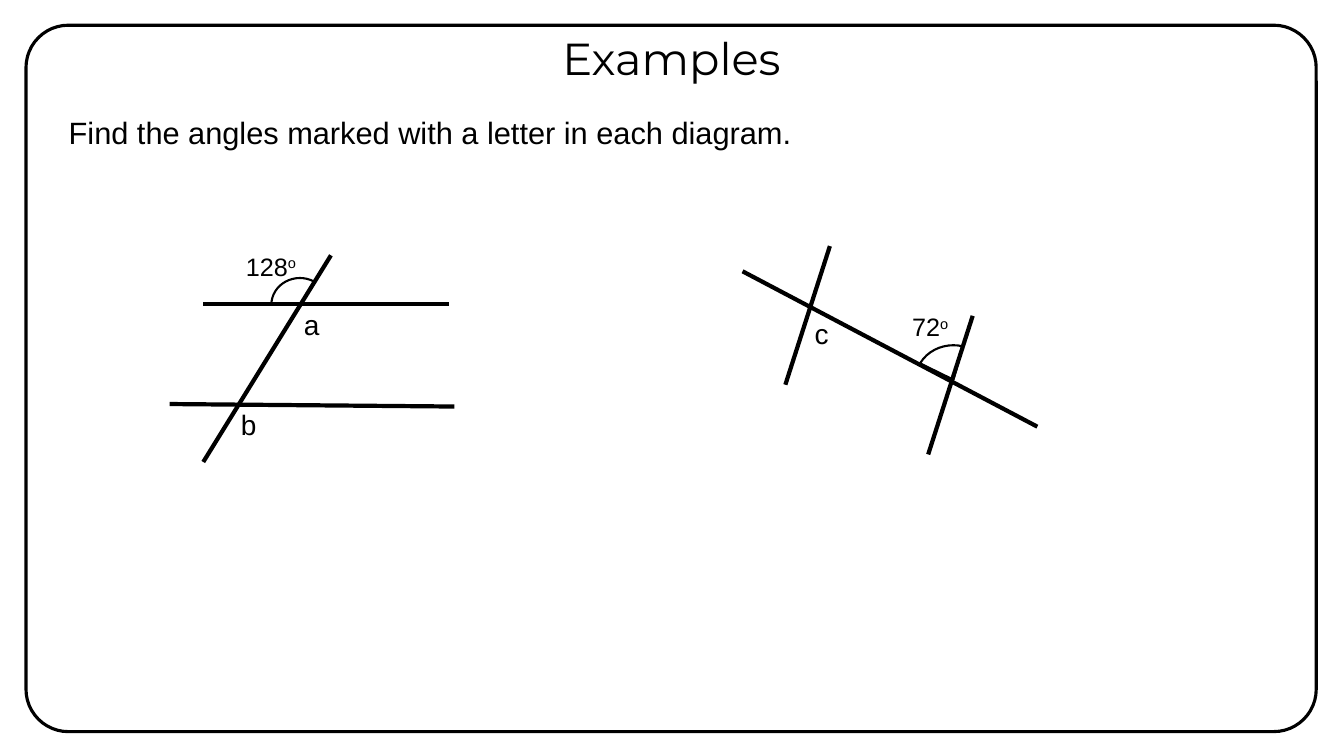
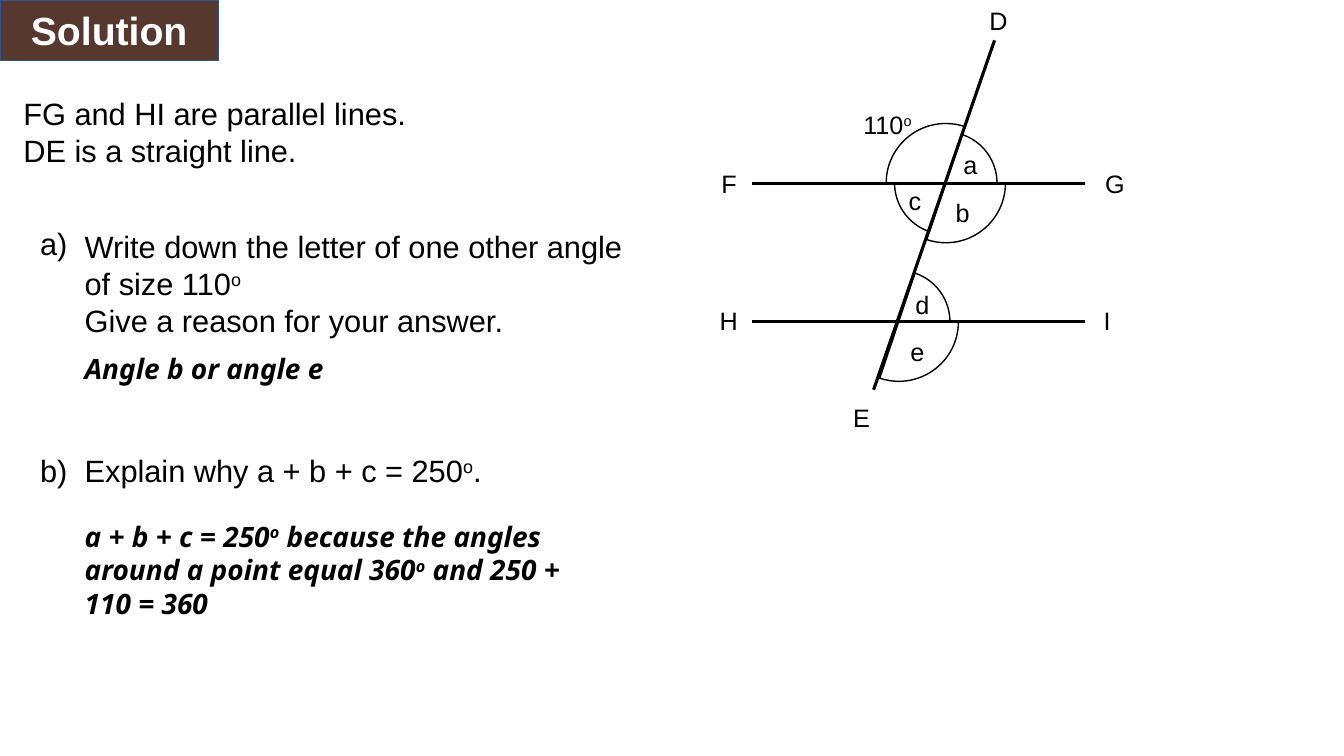
"""Build two slides on angles in parallel lines."""
from lxml.etree import SubElement
from pptx import Presentation
from pptx.dml.color import RGBColor
from pptx.enum.shapes import MSO_CONNECTOR as CONN, MSO_SHAPE as SHAPE
from pptx.enum.text import MSO_ANCHOR as ANCHOR, MSO_AUTO_SIZE as FIT, PP_ALIGN as ALIGN
from pptx.oxml.ns import qn
from pptx.util import Inches, Pt

BLACK = RGBColor(0x00, 0x00, 0x00)
WHITE = RGBColor(0xFF, 0xFF, 0xFF)
BROWN = RGBColor(0x57, 0x38, 0x2F)
BLUE = RGBColor(0x32, 0x54, 0x91)
COLS, ROWS, CELL = 160, 90, Inches(1 / 12)


class Deck:
    """Hold the style and the current slide, laid out on a grid of square cells."""

    body, title, answer = "Arial", "Montserrat", "Noto Sans"

    def __init__(self):
        self.prs = Presentation()
        self.prs.slide_width, self.prs.slide_height = COLS * CELL, ROWS * CELL
        self.s = None

    def new_slide(self):
        self.s = self.prs.slides.add_slide(self.prs.slide_layouts[6])

    def cells(self, *values):
        return [round(v * CELL) for v in values]

    def shape(self, kind, box, line=BLACK, weight=1, fill=None):
        sp = self.s.shapes.add_shape(kind, *self.cells(*box))
        sp.shadow.inherit = False
        if fill is None:
            sp.fill.background()
        else:
            sp.fill.solid()
            sp.fill.fore_color.rgb = fill
        sp.line.color.rgb = line
        sp.line.width = Pt(weight)
        return sp

    def fill_text(self, tf, paragraphs, size, name=None, color=BLACK,
                  bold=False, italic=False, align=ALIGN.LEFT):
        """Fill a text frame; text between carets is superscript."""
        tf.word_wrap = True
        for i, text in enumerate(paragraphs):
            p = tf.add_paragraph() if i else tf.paragraphs[0]
            p.alignment = align
            p.font.size, p.font.name = Pt(size), name or self.body
            p.font.bold, p.font.italic = bold, italic
            p.font.color.rgb = color
            for j, part in enumerate(text.split("^")):
                if part:
                    r = p.add_run()
                    r.text = part
                    if j % 2:
                        r._r.get_or_add_rPr().set("baseline", "30000")

    def text(self, box, *paragraphs, size=22, **style):
        tf = self.s.shapes.add_textbox(*self.cells(*box)).text_frame
        tf.auto_size = FIT.SHAPE_TO_FIT_TEXT
        self.fill_text(tf, paragraphs, size, **style)

    def solution(self, box, text):
        self.text(box, text, size=20, name=self.answer, bold=True, italic=True)

    def label(self, x, y, text, size=18, width=3.6):
        self.text((x, y, width, 4.8), text, size=size)

    def banner(self, text, width, height):
        sp = self.shape(SHAPE.RECTANGLE, (0, 0, width, height), BLUE, fill=BROWN)
        sp.text_frame.vertical_anchor = ANCHOR.MIDDLE
        self.fill_text(sp.text_frame, [text], 28, color=WHITE, bold=True, align=ALIGN.CENTER)

    def line(self, x1, y1, x2, y2, weight):
        c = self.s.shapes.add_connector(CONN.STRAIGHT, *self.cells(x1, y1, x2, y2))
        c.line.color.rgb = BLACK
        c.line.width = Pt(weight)
        SubElement(c._element.spPr, qn("a:effectLst"))

    def angle(self, center, radii, start, end, weight=1):
        """Draw a sector clockwise from start to end degrees."""
        (x, y), (rx, ry) = center, radii
        sp = self.shape(SHAPE.PIE, (x - rx, y - ry, 2 * rx, 2 * ry), weight=weight)
        for i, degrees in enumerate((start, end)):
            sp.adjustments[i] = degrees % 360 * 0.6


def examples(d):
    d.new_slide()
    frame = d.shape(SHAPE.ROUNDED_RECTANGLE, (3.1, 3, 153.6, 84.1), weight=2.25, fill=WHITE)
    frame.adjustments[0] = 0.06
    d.text((61.1, 3.1, 37.7, 7.7), "Examples", size=32, name=d.title, align=ALIGN.CENTER)
    d.text((7, 13, 138.5, 5.6), "Find the angles marked with a letter in each diagram.")

    for ends in ((24.2, 55, 39.4, 30.4), (24.2, 36.2, 53.4, 36.2), (20.2, 48.1, 54.1, 48.4)):
        d.line(*ends, 3)
    d.angle((35.7, 36.3), (3.4, 3.2), 180.3, 300.8, 1.5)
    d.label(28.1, 29.3, "128^o^", width=11)

    d.angle((113.5, 45.2), (4.5, 4.1), 206.1, 285.9, 1.5)
    d.line(88.4, 32.3, 123.5, 50.8, 3)
    for dx, dy in ((0, 0), (17, 8.3)):
        d.line(93.5 + dx, 45.8 + dy, 98.8 + dx, 29.3 + dy, 3)
    d.label(107.4, 36.5, "72^o^", width=8.4)

    for x, y, letter in ((35, 36, "a"), (27.5, 47.9, "b"), (95.8, 37.1, "c")):
        d.label(x, y, letter, size=20, width=4.3)


def solution(d):
    d.new_slide()
    d.banner("Solution", 26, 7.2)
    d.text((1.6, 10.7, 57.6, 10.1), "FG and HI are parallel lines.", "DE is a straight line.")
    d.text((3.6, 26.2, 8.4, 5.6), "a)")
    d.text((8.9, 26.5, 68.4, 14.5), "Write down the letter of one other angle of size 110^o^",
           "Give a reason for your answer.")
    d.solution((8.9, 41.3, 44.9, 5.3), "Angle b or angle e")
    d.text((3.6, 53.2, 8.4, 5.6), "b)")
    d.text((8.9, 53.2, 68.4, 5.6), "Explain why a + b + c = 250^o^.")
    d.solution((8.9, 61.2, 60.7, 13.3), "a + b + c = 250^o^ because the angles around a point "
               "equal 360^o^ and 250 + 110 = 360")

    upper, lower = (112.6, 21.8), (107, 38.3)
    for _, y in (upper, lower):
        d.line(89.5, y, 129.2, y, 2.25)
    d.line(104, 46.4, 118.4, 4.8, 2.25)
    slope = 108.6
    wide, narrow = (7.1, 7.1), (6.1, 6.1)
    for center, radii, start, end in (
            (upper, wide, 180, 180 + slope), (upper, wide, 0, slope), (lower, wide, 0, slope),
            (upper, narrow, slope, 180), (upper, narrow, 180 + slope, 360),
            (lower, narrow, 180 + slope, 360)):
        d.angle(center, radii, start, end)

    for x, y, letter in (
            (116.6, 0, "D"), (100.4, 47.3, "E"), (84.7, 19.4, "F"), (130.4, 19.4, "G"),
            (84.5, 35.8, "H"), (130.2, 35.8, "I"), (113.5, 17.2, "a"), (112.6, 22.9, "b"),
            (107, 21.5, "c"), (107.8, 33.8, "d"), (107.2, 39.5, "e")):
        d.label(x, y, letter)
    d.label(101.6, 12.4, "110^o^", width=10.2)


def main():
    d = Deck()
    examples(d)
    solution(d)
    d.prs.save("out.pptx")


if __name__ == "__main__":
    main()
